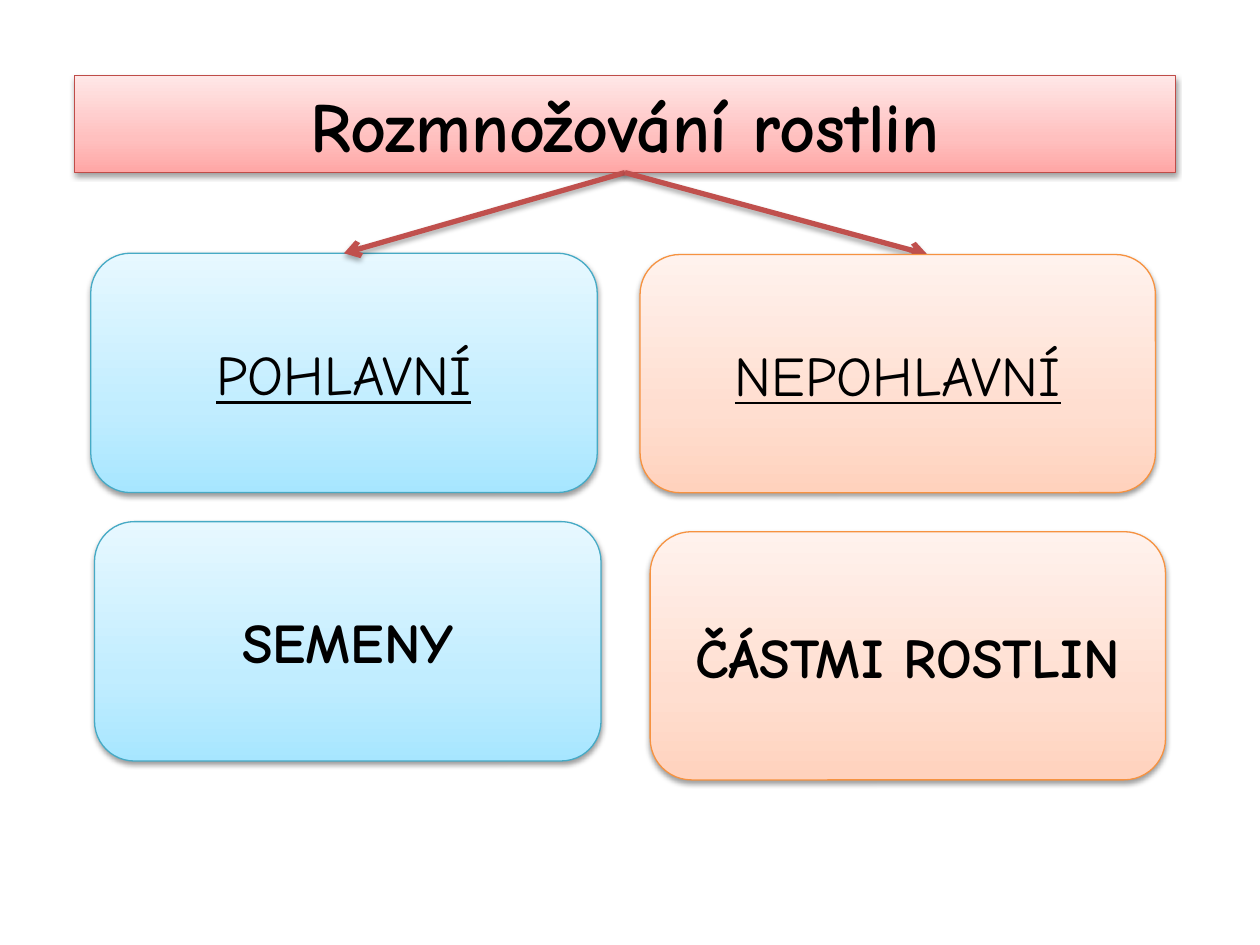
import copy

import pptx
import pptx.dml.color
import pptx.enum.shapes
import pptx.enum.text
import pptx.oxml
import pptx.oxml.ns
import pptx.util

COLS, ROWS = 100, 75
FONT = "Comic Neue"
RED = {"stops": ("FFA6A5", "FFC0BF", "FFE7E7"), "line": "BF4C48"}
BLUE = {"stops": ("A7E6FF", "C1EDFF", "E7F8FF"), "line": "46AAC5"}
ORANGE = {"stops": ("FFD2BD", "FFDED0", "FFF2ED"), "line": "F69240"}
HEADING = {"size": pptx.util.Pt(32), "bold": False, "underline": True}
ANSWER = {"size": pptx.util.Pt(32), "bold": True}


def rgb(value):
    """Turn a hex string into a colour."""
    return pptx.dml.color.RGBColor.from_string(value)


def grid(prs, *cells):
    """Turn alternating columns and rows into slide lengths."""
    units = (prs.slide_width / COLS, prs.slide_height / ROWS)
    return [round(n * units[i % 2]) for i, n in enumerate(cells)]


def add_shadow(sp, alpha, dist):
    """Give a shape or connector a soft shadow falling downwards."""
    ns = pptx.oxml.ns.nsdecls("a")
    sp._element.spPr.append(pptx.oxml.parse_xml(
        f'<a:effectLst {ns}><a:outerShdw blurRad="40000" dist="{dist}" dir="5400000" rotWithShape="0">'
        f'<a:srgbClr val="000000"><a:alpha val="{alpha}000"/></a:srgbClr></a:outerShdw></a:effectLst>'))


def style_panel(sp, theme):
    """Apply the gradient, outline and shadow of a theme."""
    sp.fill.gradient()
    sp.fill.gradient_angle = 90
    stop_list = sp._element.spPr.find(".//" + pptx.oxml.ns.qn("a:gsLst"))
    stop_list.insert(1, copy.deepcopy(stop_list[0]))
    for stop, position, value in zip(sp.fill.gradient_stops, (0, 0.35, 1), theme["stops"]):
        stop.position = position
        stop.color.rgb = rgb(value)
    sp.line.color.rgb = rgb(theme["line"])
    sp.line.width = pptx.util.Pt(0.75)
    add_shadow(sp, 38, 20000)


def write(sp, text, formats):
    """Write one centred line of text in a shape."""
    tf = sp.text_frame
    tf.word_wrap = True
    tf.auto_size = pptx.enum.text.MSO_AUTO_SIZE.NONE
    tf.vertical_anchor = pptx.enum.text.MSO_ANCHOR.MIDDLE
    p = tf.paragraphs[0]
    p.alignment = pptx.enum.text.PP_ALIGN.CENTER
    r = p.add_run()
    r.text = text
    r.font.color.rgb = rgb("000000")
    for name, value in {"name": FONT, **formats}.items():
        setattr(r.font, name, value)


def add_title(prs, s, box, text):
    """Place the title banner in its box."""
    sp = s.shapes.title
    sp.left, sp.top, sp.width, sp.height = grid(prs, *box)
    style_panel(sp, RED)
    write(sp, text, {"size": pptx.util.Pt(40), "bold": True})
    return sp


def add_card(prs, s, box, text, theme, formats):
    """Place a rounded card in its box."""
    sp = s.shapes.add_shape(pptx.enum.shapes.MSO_SHAPE.ROUNDED_RECTANGLE, *grid(prs, *box))
    style_panel(sp, theme)
    write(sp, text, formats)
    return sp


def add_arrow(prs, s, title, end):
    """Draw an arrow from the bottom of the title to a point."""
    start = (title.left + title.width // 2, title.top + title.height)
    sp = s.shapes.add_connector(pptx.enum.shapes.MSO_CONNECTOR.STRAIGHT, *start, *grid(prs, *end))
    sp.begin_connect(title, 2)
    sp.line.color.rgb = rgb("C0504D")
    sp.line.width = pptx.util.Pt(3)
    sp.line._get_or_add_ln().append(
        pptx.oxml.parse_xml(f'<a:tailEnd {pptx.oxml.ns.nsdecls("a")} type="arrow"/>'))
    add_shadow(sp, 35, 23000)
    return sp


def main():
    """Build the slide and save it."""
    prs = pptx.Presentation()
    prs.slide_width, prs.slide_height = pptx.util.Inches(10), pptx.util.Inches(7.5)
    s = prs.slides.add_slide(prs.slide_layouts[5])
    title = add_title(prs, s, (5.9, 6, 87.4, 7.7), "Rozmnožování rostlin")
    sexual = add_card(prs, s, (7.2, 20.1, 40.2, 19), "POHLAVNÍ", BLUE, HEADING)
    add_arrow(prs, s, title, (27.3, 20.1)).end_connect(sexual, 0)
    add_arrow(prs, s, title, (73.6, 20.2))
    add_card(prs, s, (50.8, 20.2, 40.9, 18.9), "NEPOHLAVNÍ", ORANGE, HEADING)
    add_card(prs, s, (7.5, 41.4, 40.2, 19), "SEMENY", BLUE, ANSWER)
    add_card(prs, s, (51.6, 42.2, 40.9, 19.7), "ČÁSTMI ROSTLIN", ORANGE, ANSWER)
    prs.save("out.pptx")


if __name__ == "__main__":
    main()
